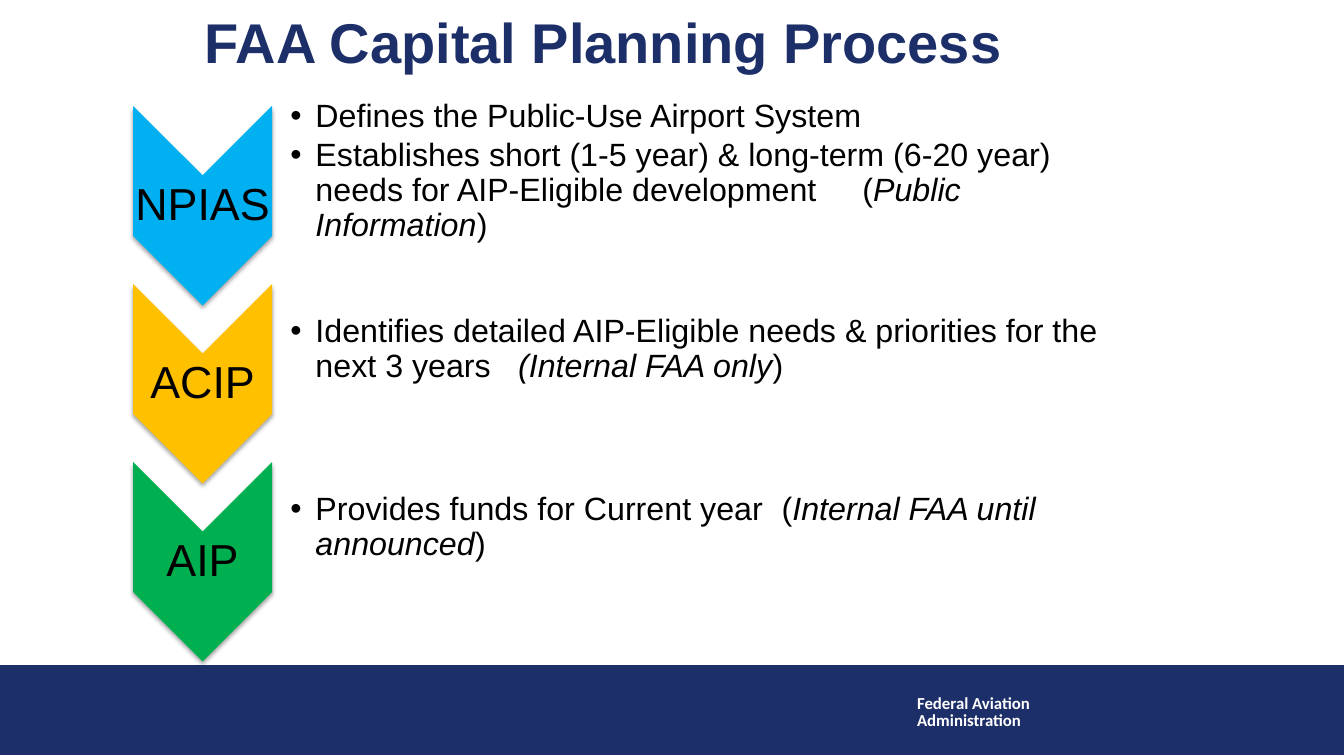
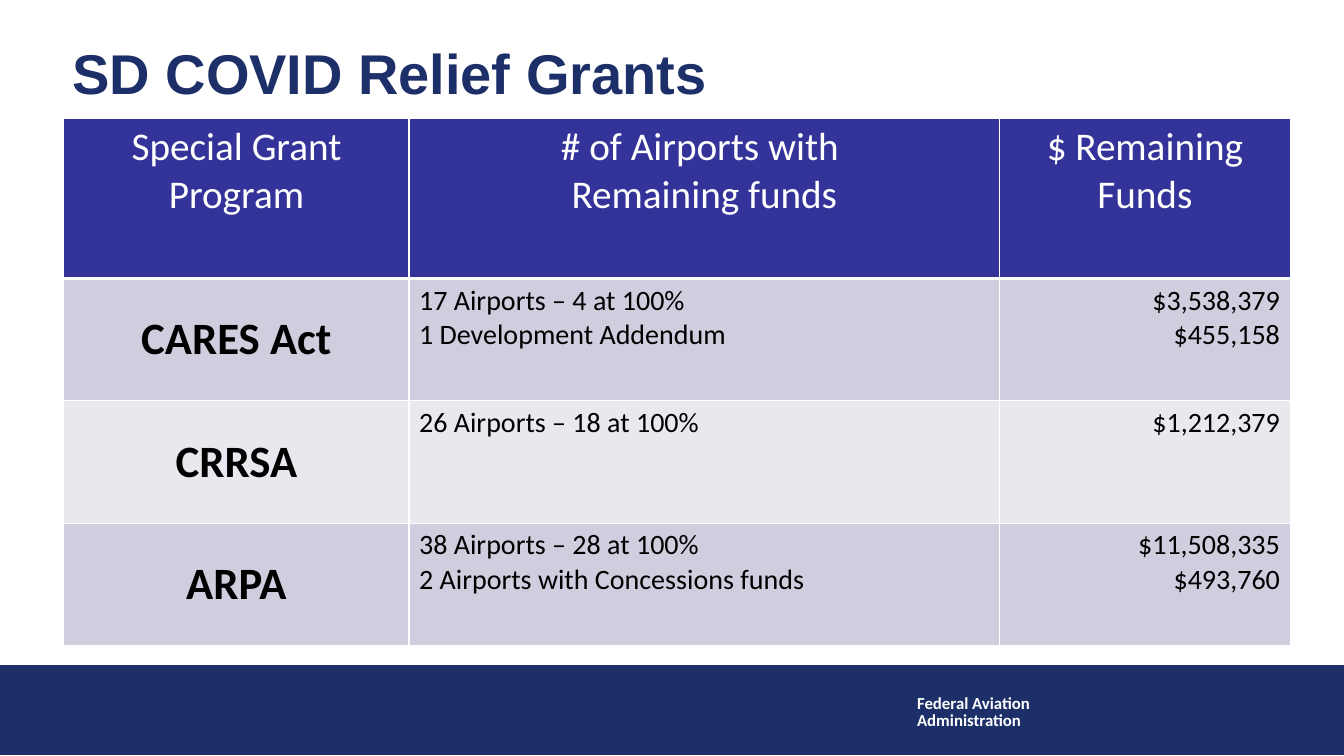
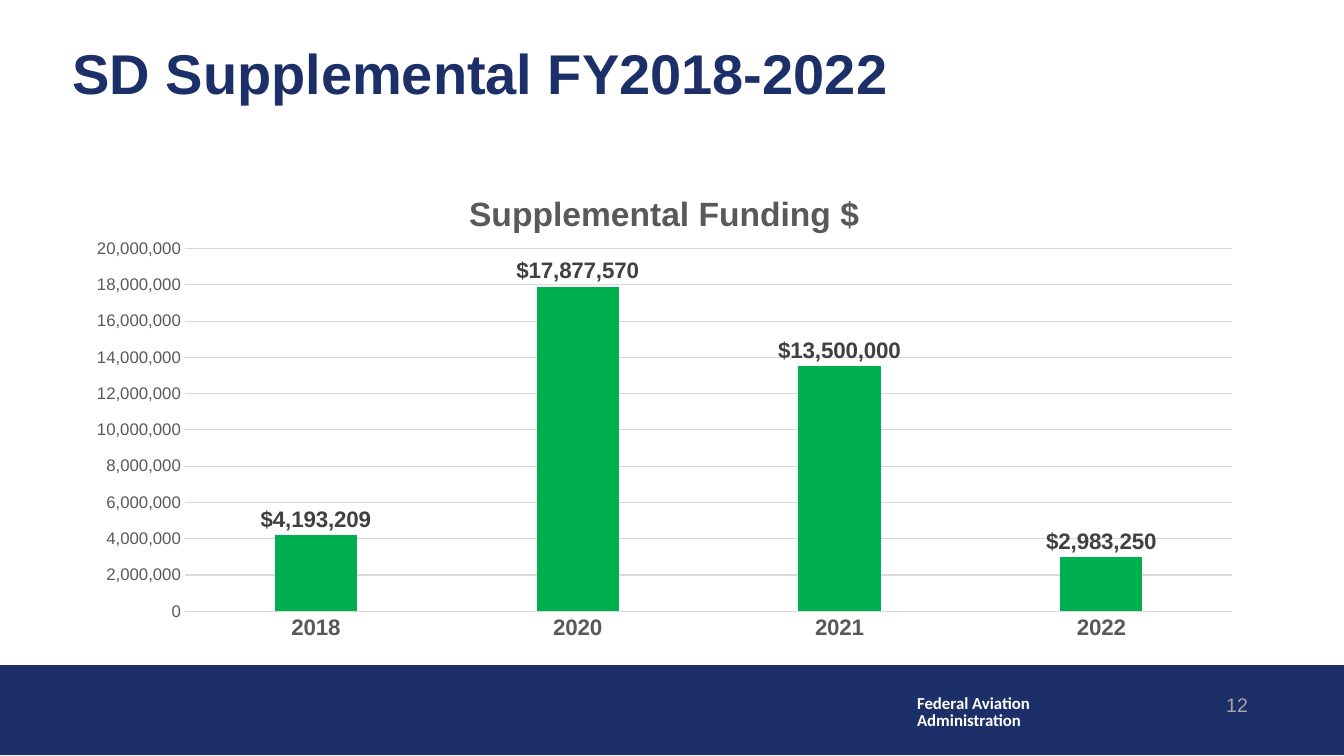
from typing import NamedTuple

from lxml.etree import SubElement
from pptx import Presentation
from pptx.chart.data import CategoryChartData
from pptx.dml.color import RGBColor
from pptx.enum.chart import XL_CHART_TYPE, XL_LABEL_POSITION, XL_TICK_MARK
from pptx.enum.shapes import MSO_SHAPE
from pptx.enum.text import MSO_ANCHOR, MSO_AUTO_SIZE, PP_ALIGN
from pptx.oxml import parse_xml
from pptx.oxml.ns import nsdecls, qn
from pptx.util import Inches, Pt

# Colours
NAVY = RGBColor(0x1D, 0x2F, 0x68)
INDIGO = RGBColor(0x33, 0x33, 0x99)
LILAC = RGBColor(0xCE, 0xCE, 0xDE)
MIST = RGBColor(0xE8, 0xE8, 0xEF)
SKY = RGBColor(0x00, 0xB0, 0xF0)
AMBER = RGBColor(0xFF, 0xC0, 0x00)
GREEN = RGBColor(0x00, 0xB0, 0x50)
WHITE = RGBColor(0xFF, 0xFF, 0xFF)
BLACK = RGBColor(0x00, 0x00, 0x00)
CHARCOAL = RGBColor(0x40, 0x40, 0x40)
GRAPHITE = RGBColor(0x59, 0x59, 0x59)
SILVER = RGBColor(0xA6, 0xA6, 0xA6)
GRID_GRAY = RGBColor(0xD9, 0xD9, 0xD9)

# Text formats
TITLE = dict(name="Arial", size=Pt(40), bold=True, color=NAVY)
AGENCY = dict(name="Calibri", size=Pt(12), bold=True, color=WHITE)
NUMBER = dict(name="Arial", size=Pt(14), color=SILVER)
STEP = dict(name="Arial", size=Pt(32), color=BLACK)
DETAIL = dict(name="Arial", size=Pt(23), bold=False, color=BLACK)
HEADER = dict(name="Calibri", size=Pt(28), bold=False, color=WHITE)
PROGRAM = dict(name="Calibri", size=Pt(32), bold=True, color=BLACK)
FIGURE = dict(name="Calibri", size=Pt(20), bold=False, color=BLACK)
CHART_TITLE = dict(name="Arial", size=Pt(24), bold=True, color=GRAPHITE)
CATEGORY = dict(name="Arial", size=Pt(16), bold=True, color=GRAPHITE)
SCALE = dict(name="Arial", size=Pt(12), bold=False, color=GRAPHITE)
VALUE = dict(name="Arial", size=Pt(16), bold=True, color=CHARCOAL)

# Grid of 160 columns by 90 rows, twelve to the inch
COLUMNS, ROWS = 160, 90
BREAK = "\n"
TITLE_ONLY, COMPARISON = 5, 4


def grid(count):
    return Inches(count / 12)


class Box(NamedTuple):
    left: float
    top: float
    width: float
    height: float

    def inside(self, left, top, width, height):
        """A box measured from this box's corner."""
        return Box(self.left + left, self.top + top, width, height)

    def lengths(self):
        return [grid(count) for count in self]


TITLE_BOX = Box(7.44, 4.56, 148.2, 8.04)
BAND_BOX = Box(0, 79.2, COLUMNS, 10.68)


class Span(NamedTuple):
    text: str
    italic: bool = False
    spread: int = 0  # extra space widths after the text


def style(font, look):
    for name, value in look.items():
        if name == "color":
            font.color.rgb = value
        else:
            setattr(font, name, value)


def place(shape, box):
    for name, value in zip(("left", "top", "width", "height"), box.lengths()):
        setattr(shape, name, value)


def set_frame(frame, inset=None, **settings):
    frame.word_wrap = True
    frame.auto_size = MSO_AUTO_SIZE.NONE
    for side, value in zip(("left", "top", "right", "bottom"), inset or ()):
        setattr(frame, f"margin_{side}", Inches(value))
    for name, value in settings.items():
        setattr(frame, name, value)


def write(frame, lines, look, **layout):
    for index, line in enumerate(lines):
        para = frame.paragraphs[0] if index == 0 else frame.add_paragraph()
        for name, value in layout.items():
            setattr(para, name, value)
        span = para.add_run()
        span.text = line
        style(span.font, look)


def plain_shape(page, kind, box, color):
    shape = page.shapes.add_shape(kind, *box.lengths())
    shape.shadow.inherit = False
    shape.fill.solid()
    shape.fill.fore_color.rgb = color
    shape.line.fill.background()
    return shape


# Shared footer, title and page number
def add_band(deck, page, box):
    """Put the footer band and agency name on the master, behind all else."""
    band = plain_shape(page, MSO_SHAPE.RECTANGLE, box, NAVY)
    band.line.color.rgb = NAVY
    band.line.width = Pt(0.75)
    agency = page.shapes.add_textbox(*box.inside(108, 3, 18, 5.28).lengths())
    agency.text_frame.word_wrap = False
    write(agency.text_frame, ["Federal Aviation", "Administration"], AGENCY,
          line_spacing=0.85)
    tree = deck.slide_master.shapes.element
    for order, shape in enumerate((band, agency)):
        shape.element.xpath(".//p:cNvPr")[0].set("id", str(101 + order))
        tree.insert(2 + order, shape.element)


def new_page(deck, layout, title, box=TITLE_BOX):
    page = deck.slides.add_slide(deck.slide_layouts[layout])
    place(page.shapes.title, box)
    frame = page.shapes.title.text_frame
    set_frame(frame, vertical_anchor=MSO_ANCHOR.MIDDLE)
    write(frame, [title], TITLE, alignment=PP_ALIGN.LEFT)
    return page


def add_page_number(page, number, box):
    label = page.shapes.add_textbox(
        *box.inside(130.92, 2.76, 18.84, 6).lengths())
    set_frame(label.text_frame)
    write(label.text_frame, [number], NUMBER, alignment=PP_ALIGN.RIGHT)


# Planning steps
def add_chevron(page, box, color):
    # Drawn lying down, then turned to point downward
    lying = box.inside((box.width - box.height) / 2,
                       (box.height - box.width) / 2, box.height, box.width)
    chevron = plain_shape(page, MSO_SHAPE.CHEVRON, lying, color)
    chevron.rotation = 90
    effects = chevron.element.spPr.find(qn("a:effectLst"))
    shadow = SubElement(effects, qn("a:outerShdw"), blurRad=str(Pt(3.1)),
                        dist=str(Pt(1.8)), dir="5400000", rotWithShape="0")
    tint = SubElement(shadow, qn("a:srgbClr"), val="000000")
    SubElement(tint, qn("a:alpha"), val="35000")


def add_bullet(para, spans):
    properties = para._p.get_or_add_pPr()
    properties.set("marL", str(Inches(0.25)))
    properties.set("indent", str(-Inches(0.25)))
    SubElement(properties, qn("a:buFont"), typeface="Arial")
    SubElement(properties, qn("a:buChar"), char="•")
    layout = dict(alignment=PP_ALIGN.LEFT, line_spacing=0.9,
                  space_before=Pt(0), space_after=Pt(3.45))
    for name, value in layout.items():
        setattr(para, name, value)
    for piece in spans:
        if piece == BREAK:
            para.add_line_break()
            continue
        span = para.add_run()
        span.text = piece.text
        style(span.font, dict(DETAIL, italic=piece.italic))
        if piece.spread:
            # A space in this font is 6.4 points wide
            span.font._element.set("spc", str(640 * piece.spread))


def add_step(page, box, body, name, color, bullets):
    add_chevron(page, box, color)
    label = page.shapes.add_textbox(
        *box.inside(0, 8.4, box.width, 7.08).lengths())
    set_frame(label.text_frame, [0.02] * 4, vertical_anchor=MSO_ANCHOR.MIDDLE)
    write(label.text_frame, [name], STEP, alignment=PP_ALIGN.CENTER,
          line_spacing=0.9)
    place(body, box.inside(box.width, 0.84, 103, 13.92))
    frame = body.text_frame
    set_frame(frame, [0.18, 0.02, 0.02, 0.02],
              vertical_anchor=MSO_ANCHOR.MIDDLE)
    for index, spans in enumerate(bullets):
        add_bullet(frame.paragraphs[0] if index == 0 else frame.add_paragraph(),
                   spans)


def planning_page(deck):
    page = new_page(deck, COMPARISON, "FAA Capital Planning Process",
                    Box(23.16, 0.84, 113.52, 8.04))
    steps = [
        ("NPIAS", SKY, [
            [Span("Defines the Public-Use Airport System")],
            [Span("Establishes short (1-5 year) & long-term (6-20 year) "),
             BREAK, Span("needs for AIP-Eligible development"),
             Span(" ", spread=4), Span("("),
             Span("Public Information", italic=True), Span(")")]]),
        ("ACIP", AMBER, [
            [Span("Identifies detailed AIP-Eligible needs & priorities "
                  "for the next 3 years"), Span(" ", spread=2),
             Span("(Internal FAA only", italic=True), Span(")")]]),
        ("AIP", GREEN, [
            [Span("Provides funds for Current year"), Span(" ", spread=1),
             Span("("), Span("Internal FAA until announced", italic=True),
             Span(")")]]),
    ]
    bodies = [holder for holder in page.placeholders
              if holder.placeholder_format.idx]
    for index, (body, step) in enumerate(zip(bodies, steps)):
        add_step(page, Box(15.84, 12.6 + 21.2 * index, 16.56, 23.76),
                 body, *step)
    for spare in bodies[len(steps):]:
        spare.element.getparent().remove(spare.element)
    return page


# Grant table
def fill_cell(cell, lines, look, alignment, color, anchor, bottom=1):
    properties = cell._tc.get_or_add_tcPr()
    for side, width in (("L", 1), ("R", 1), ("T", 1), ("B", bottom)):
        line = SubElement(properties, qn(f"a:ln{side}"), w=str(Pt(width)))
        solid = SubElement(line, qn("a:solidFill"))
        SubElement(solid, qn("a:srgbClr"), val=str(WHITE))
    cell.fill.solid()
    cell.fill.fore_color.rgb = color
    cell.vertical_anchor = anchor
    write(cell.text_frame, lines, look, alignment=alignment)


def add_grants(page, box, rows):
    table = page.shapes.add_table(len(rows), 3, *box.lengths()).table
    for column, width in zip(table.columns, (41.1, 70.3, 34.6)):
        column.width = grid(width)
    columns = [(PROGRAM, PP_ALIGN.CENTER, MSO_ANCHOR.MIDDLE),
               (FIGURE, PP_ALIGN.LEFT, MSO_ANCHOR.TOP),
               (FIGURE, PP_ALIGN.RIGHT, MSO_ANCHOR.TOP)]
    for y, row in enumerate(rows):
        table.rows[y].height = grid(14.57 if y else 19.05)
        for x, lines in enumerate(row):
            look, alignment, anchor = columns[x]
            if y == 0:
                fill_cell(table.cell(y, x), lines, HEADER, PP_ALIGN.CENTER,
                          INDIGO, MSO_ANCHOR.TOP, bottom=3)
            else:
                fill_cell(table.cell(y, x), lines, look, alignment,
                          LILAC if y % 2 else MIST, anchor)


def grants_page(deck):
    page = new_page(deck, TITLE_ONLY, "SD COVID Relief Grants")
    add_grants(page, Box(7.6, 14.1, 146, 62.76), [
        (["Special Grant Program"],
         ["# of Airports with ", "Remaining funds"],
         ["$ Remaining Funds"]),
        (["CARES Act"],
         ["17 Airports – 4 at 100%", "1 Development Addendum"],
         ["$3,538,379", "$455,158"]),
        (["CRRSA"], ["26 Airports – 18 at 100%"], ["$1,212,379"]),
        (["ARPA"],
         ["38 Airports – 28 at 100%", "2 Airports with Concessions funds"],
         ["$11,508,335", "$493,760"]),
    ])


# Funding chart
def set_layout(element, index, target=None, **shares):
    """Fix where an element of the chart stands, as shares of the chart."""
    for old in element.findall(qn("c:layout")):
        element.remove(old)
    layout = parse_xml(f"<c:layout {nsdecls('c')}><c:manualLayout/></c:layout>")
    manual = layout[0]
    if target:
        SubElement(manual, qn("c:layoutTarget"), val=target)
    for mode in ("xMode", "yMode"):
        SubElement(manual, qn(f"c:{mode}"), val="edge")
    for name, share in shares.items():
        SubElement(manual, qn(f"c:{name}"), val=str(share))
    element.insert(index, layout)


def format_axes(chart):
    for axis, look in ((chart.category_axis, CATEGORY),
                       (chart.value_axis, SCALE)):
        axis.major_tick_mark = axis.minor_tick_mark = XL_TICK_MARK.NONE
        style(axis.tick_labels.font, look)
    scale = chart.value_axis
    scale.minimum_scale, scale.maximum_scale = 0, 20_000_000
    scale.major_unit = 2_000_000
    scale.tick_labels.number_format = "#,##0"
    scale.tick_labels.number_format_is_linked = False
    scale.format.line.fill.background()
    for ruled in (chart.category_axis, scale.major_gridlines):
        ruled.format.line.color.rgb = GRID_GRAY
        ruled.format.line.width = Pt(0.75)


def add_funding(page, box, title, years, amounts):
    data = CategoryChartData()
    data.categories = years
    data.add_series("Series 1", amounts)
    chart = page.shapes.add_chart(XL_CHART_TYPE.COLUMN_CLUSTERED,
                                  *box.lengths(), data).chart
    style(chart.font, dict(name="Arial", size=Pt(10), color=BLACK))
    chart.has_legend = False
    chart.has_title = True
    write(chart.chart_title.text_frame, [title], CHART_TITLE)
    format_axes(chart)

    # Columns and their labels
    plot = chart.plots[0]
    plot.gap_width, plot.overlap, plot.vary_by_categories = 219, -27, False
    series = plot.series[0]
    series.format.fill.solid()
    series.format.fill.fore_color.rgb = GREEN
    labels = series.data_labels
    settings = dict(show_value=True, position=XL_LABEL_POSITION.OUTSIDE_END,
                    number_format='"$"#,##0', number_format_is_linked=False)
    for name, value in settings.items():
        setattr(labels, name, value)
    style(labels.font, VALUE)

    # Title and plot area
    set_layout(chart.element.xpath("./c:chart/c:title")[0], 1, x=0.33, y=0.04)
    set_layout(chart.element.xpath(".//c:plotArea")[0], 0, "inner",
               x=0.095, y=0.17, w=0.885, h=0.75)


def funding_page(deck):
    page = new_page(deck, TITLE_ONLY, "SD Supplemental FY2018-2022")
    add_funding(page, Box(8.64, 19.8, 140.88, 57.6), "Supplemental Funding $",
                ["2018", "2020", "2021", "2022"],
                [4193209, 17877570, 13500000, 2983250])
    add_page_number(page, "12", BAND_BOX)


def main():
    deck = Presentation()
    deck.slide_width, deck.slide_height = grid(COLUMNS), grid(ROWS)
    first = planning_page(deck)
    add_band(deck, first, BAND_BOX)
    grants_page(deck)
    funding_page(deck)
    deck.save("out.pptx")


if __name__ == "__main__":
    main()
